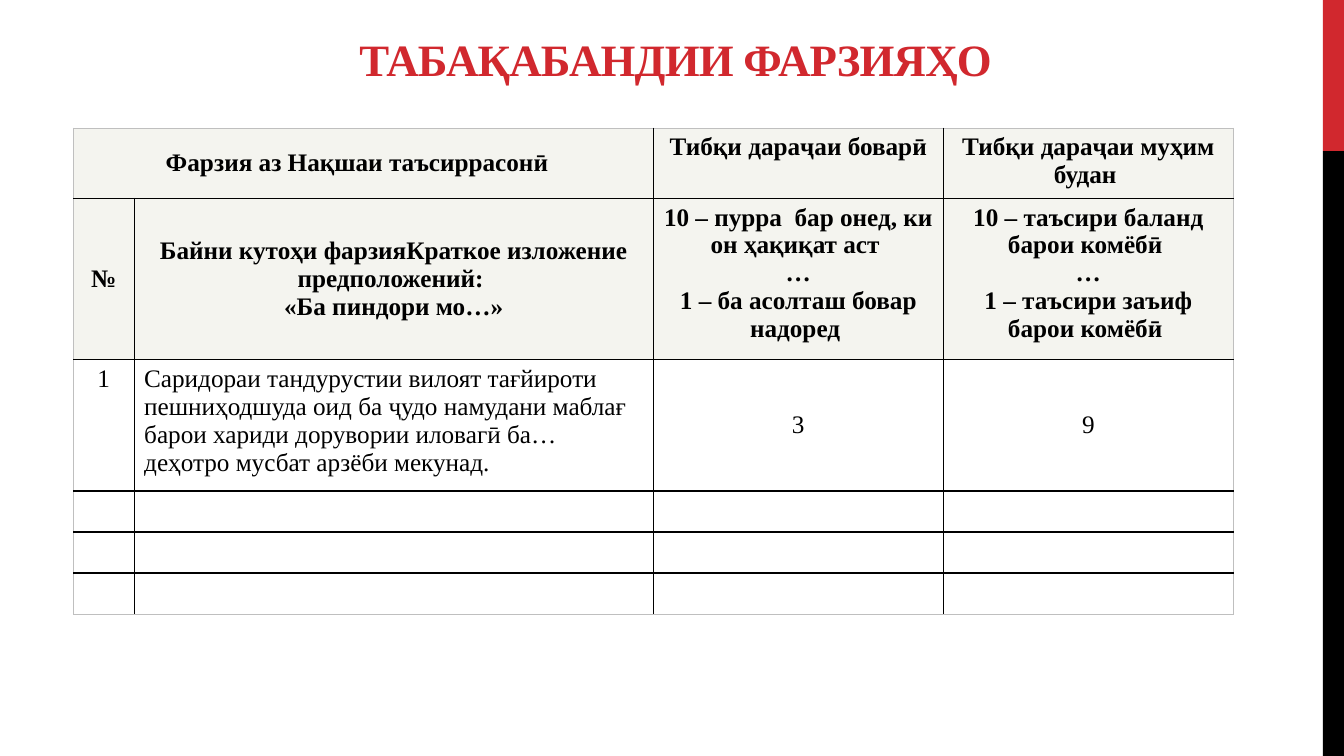
import pptx
import pptx.util
import pptx.dml.color
import pptx.enum.shapes
import pptx.enum.text
import pptx.oxml.ns
from lxml import etree

Pt = pptx.util.Pt
RGBColor = pptx.dml.color.RGBColor
ALIGN = pptx.enum.text.PP_ALIGN
ANCHOR = pptx.enum.text.MSO_ANCHOR

RED = RGBColor(0xD1, 0x28, 0x2E)
BLACK = RGBColor(0, 0, 0)
GREY = RGBColor(0xBF, 0xBF, 0xBF)
HEADER_FILL = RGBColor(0xF4, 0xF4, 0xEF)
FONT = "Times New Roman"

COLUMN_WIDTHS = [43.4, 370.8, 207.2, 207.2]
ROW_HEIGHTS = [47.2, 107.2, 86.4, 29.3, 29.3, 29.3]
HEADER_ROWS = 2
ROWS = [
    ["Фарзия аз Нақшаи таъсиррасонӣ  ", "",
     " Тибқи дараҷаи боварӣ  ", "Тибқи дараҷаи муҳим будан "],
    ["№",
     "Байни кутоҳи фарзияКраткое изложение предположений: \n«Ба пиндори мо…»",
     "10 – пурра  бар онед, ки он ҳақиқат аст \n…\n1 – ба асолташ бовар надоред ",
     "10 – таъсири баланд барои комёбӣ \n…\n1 – таъсири заъиф барои комёбӣ "],
    ["1",
     "Саридораи тандурустии вилоят тағйироти пешниҳодшуда оид ба ҷудо намудани "
     "маблағ барои хариди дорувории иловагӣ ба… деҳотро мусбат арзёби мекунад.",
     "3", "9"],
]
MIDDLE_CELLS = {(0, 0), (1, 0), (1, 1), (2, 2), (2, 3)}
LEFT_CELLS = {(2, 1)}


def format_text(tf, size, color, bold, align):
    for p in tf.paragraphs:
        p.alignment = align
        for r in p.runs:
            r.font.name = FONT
            r.font.size = Pt(size)
            r.font.bold = bold
            r.font.color.rgb = color


def add_bar(s, top, height, color):
    sp = s.shapes.add_shape(pptx.enum.shapes.MSO_SHAPE.RECTANGLE,
                            Pt(944.9), Pt(top), Pt(15.1), Pt(height))
    sp.shadow.inherit = False
    sp.fill.solid()
    sp.fill.fore_color.rgb = color
    sp.line.fill.background()


def add_title(s, text):
    sp = s.shapes.add_textbox(Pt(66.2), Pt(14.4), Pt(840.2), Pt(50.4))
    tf = sp.text_frame
    tf.word_wrap = True
    tf.vertical_anchor = ANCHOR.BOTTOM
    tf.text = text
    format_text(tf, 32, RED, True, ALIGN.CENTER)
    for r in tf.paragraphs[0].runs:
        r.font._element.set("spc", "-60")


def set_border(cell, side, color, width):
    qn = pptx.oxml.ns.qn
    ln = etree.SubElement(cell._tc.get_or_add_tcPr(), qn("a:" + side), w=str(Pt(width)))
    fill = etree.SubElement(ln, qn("a:solidFill"))
    etree.SubElement(fill, qn("a:srgbClr"), val=str(color))


def set_borders(cell, row, col):
    outer = {
        "lnL": col == 0,
        "lnR": col == len(COLUMN_WIDTHS) - 1,
        "lnT": row == 0,
        "lnB": row == len(ROW_HEIGHTS) - 1,
    }
    for side, is_outer in outer.items():
        set_border(cell, side, GREY if is_outer else BLACK, 0.5 if is_outer else 1)


def add_assumptions_table(s):
    table = s.shapes.add_table(len(ROW_HEIGHTS), len(COLUMN_WIDTHS), Pt(52.4), Pt(91.4),
                               Pt(sum(COLUMN_WIDTHS)), Pt(sum(ROW_HEIGHTS))).table
    table.first_row = False
    table.horz_banding = False
    for column, width in zip(table.columns, COLUMN_WIDTHS):
        column.width = Pt(width)
    for row, height in enumerate(ROW_HEIGHTS):
        table.rows[row].height = Pt(height)
        for col in range(len(COLUMN_WIDTHS)):
            cell = table.cell(row, col)
            set_borders(cell, row, col)
            if row < HEADER_ROWS:
                cell.fill.solid()
                cell.fill.fore_color.rgb = HEADER_FILL
            else:
                cell.fill.background()
            if row < len(ROWS):
                cell.text_frame.text = ROWS[row][col]
                align = ALIGN.LEFT if (row, col) in LEFT_CELLS else ALIGN.CENTER
                format_text(cell.text_frame, 18, BLACK, row < HEADER_ROWS, align)
            if (row, col) in MIDDLE_CELLS:
                cell.vertical_anchor = ANCHOR.MIDDLE
    table.cell(0, 0).merge(table.cell(0, 1))


def main():
    prs = pptx.Presentation()
    prs.slide_width = Pt(960)
    prs.slide_height = Pt(540)
    s = prs.slides.add_slide(prs.slide_layouts[6])
    add_bar(s, 0, 108, RED)
    add_bar(s, 108, 432, BLACK)
    add_title(s, "ТАБАҚАБАНДИИ ФАРЗИЯҲО ")
    add_assumptions_table(s)
    prs.save("out.pptx")


if __name__ == "__main__":
    main()
